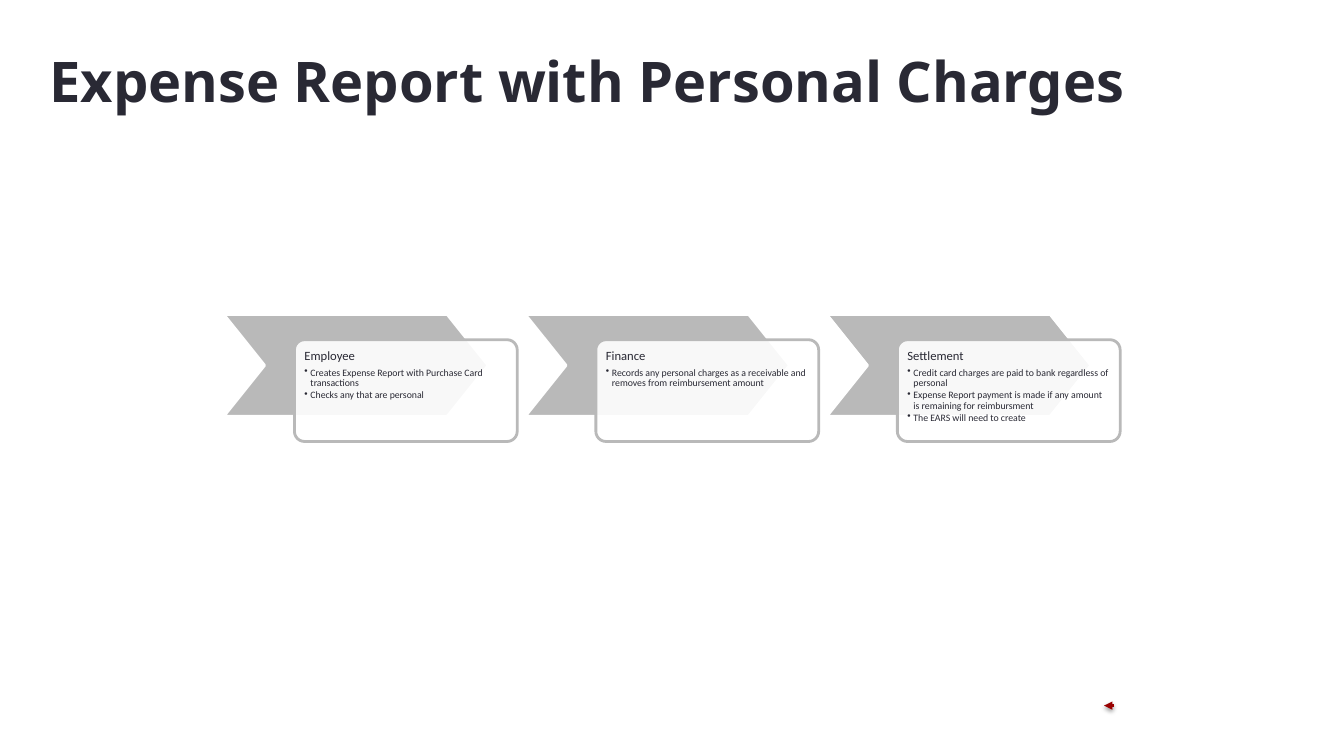
"""Build a slide showing the three steps of an expense report with personal charges."""
import dataclasses

import lxml.etree
import pptx
import pptx.dml.color
import pptx.enum.shapes
import pptx.enum.text
import pptx.oxml.ns
import pptx.util

PX = 9144


@dataclasses.dataclass(frozen=True)
class Theme:
    """Colours, fonts and type sizes of the slide."""
    ink: str = "292934"
    gray: str = "B9B9B9"
    white: str = "FFFFFF"
    red: str = "990000"
    black: str = "000000"
    title_font: str = "Noto Sans"
    body_font: str = "Calibri"
    title_size: int = 40
    heading_size: int = 9
    bullet_size: int = 7
    line_width: int = 2


THEME = Theme()

STEPS = [
    ("Employee", [
        "Creates Expense Report with Purchase Card transactions",
        "Checks any that are personal\u00a0",
    ]),
    ("Finance", [
        "Records any personal charges as a receivable and removes from reimbursement amount",
    ]),
    ("Settlement", [
        "Credit card charges are paid to bank regardless of personal",
        "Expense Report payment is made if any amount is remaining for reimbursment",
        "The EARS will need to create",
    ]),
]


def px(length):
    """Turn px into EMU."""
    return pptx.util.Emu(length * PX)


def rgb(value):
    """Turn a hex string into a colour."""
    return pptx.dml.color.RGBColor.from_string(value)


def add_element(parent, tag, **attributes):
    """Append a DrawingML element to a parent and return it."""
    element = lxml.etree.SubElement(parent, pptx.oxml.ns.qn(tag))
    for name, value in attributes.items():
        element.set(name, str(value))
    return element


def add_text(paragraph, text, font_name, size, bold=False):
    """Add one formatted run to a paragraph."""
    run = paragraph.add_run()
    run.text = text
    run.font.name = font_name
    run.font.size = pptx.util.Pt(size)
    run.font.bold = bold
    run.font.color.rgb = rgb(THEME.ink)
    paragraph.alignment = pptx.enum.text.PP_ALIGN.LEFT
    paragraph.line_spacing = 0.9


def add_title(slide, box, text):
    """Place and fill the title placeholder."""
    title = slide.shapes.title
    title.left, title.top, title.width, title.height = map(px, box)
    frame = title.text_frame
    frame.word_wrap = True
    frame.auto_size = pptx.enum.text.MSO_AUTO_SIZE.NONE
    frame.vertical_anchor = pptx.enum.text.MSO_ANCHOR.MIDDLE
    add_text(frame.paragraphs[0], text, THEME.title_font, THEME.title_size, True)


def add_panel(shapes, kind, box, adjustment, fill, line):
    """Add a filled and outlined preset shape."""
    shape = shapes.add_shape(kind, *map(px, box))
    shape.adjustments[0] = adjustment
    shape.shadow.inherit = False
    shape.fill.solid()
    shape.fill.fore_color.rgb = rgb(fill)
    shape.line.color.rgb = rgb(line)
    shape.line.width = pptx.util.Pt(THEME.line_width)
    return shape


def fill_card(card, heading, bullets):
    """Write a heading and its bullets into a card."""
    frame = card.text_frame
    frame.word_wrap = True
    frame.vertical_anchor = pptx.enum.text.MSO_ANCHOR.TOP
    frame.margin_left = frame.margin_top = px(7)
    frame.margin_right = frame.margin_bottom = px(7)
    first = frame.paragraphs[0]
    add_text(first, heading, THEME.body_font, THEME.heading_size)
    first.space_after = pptx.util.Pt(3)
    for bullet in bullets:
        paragraph = frame.add_paragraph()
        properties = paragraph._p.get_or_add_pPr()
        properties.set("marL", str(px(6)))
        properties.set("indent", str(px(-6)))
        add_element(properties, "a:buChar", char="•")
        paragraph.level = 1
        add_text(paragraph, bullet, THEME.body_font, THEME.bullet_size)
        paragraph.space_after = pptx.util.Pt(1)


def add_step(shapes, box, heading, bullets):
    """Add a chevron with a translucent card over its lower right corner."""
    left, top, width, height = box
    card_left, card_top = 70, 25
    kinds = pptx.enum.shapes.MSO_SHAPE
    add_panel(shapes, kinds.CHEVRON, (left, top, 262, height - card_top),
              0.4, THEME.gray, THEME.white)
    card = add_panel(
        shapes, kinds.ROUNDED_RECTANGLE,
        (left + card_left, top + card_top, width - card_left, height - card_top),
        0.1, THEME.white, THEME.gray)
    color = card._element.spPr.find(".//" + pptx.oxml.ns.qn("a:srgbClr"))
    add_element(color, "a:alpha", val=90000)
    fill_card(card, heading, bullets)


def add_process(slide, box, steps):
    """Lay out the steps as equal columns in one group."""
    left, top, width, height = box
    gap = 8
    step_width = (width - gap * (len(steps) - 1)) // len(steps)
    group = slide.shapes.add_group_shape()
    for index, (heading, bullets) in enumerate(steps):
        step_left = left + index * (step_width + gap)
        add_step(group.shapes, (step_left, top, step_width, height), heading, bullets)


def add_back_arrow(slide, box):
    """Add a short arrow pointing left with a soft shadow."""
    left, top, width, height = box
    arrow = slide.shapes.add_connector(
        pptx.enum.shapes.MSO_CONNECTOR.STRAIGHT,
        px(left + width), px(top), px(left), px(top + height))
    arrow.line.color.rgb = rgb(THEME.red)
    arrow.line.width = pptx.util.Pt(THEME.line_width)
    add_element(arrow.line._get_or_add_ln(), "a:tailEnd", type="triangle")
    effects = add_element(arrow._element.spPr, "a:effectLst")
    shadow = add_element(
        effects, "a:outerShdw", blurRad=pptx.util.Pt(3.1), dist=pptx.util.Pt(1.6),
        dir=5400000, rotWithShape=0)
    color = add_element(shadow, "a:srgbClr", val=THEME.black)
    add_element(color, "a:alpha", val=38000)


def main():
    """Build and save the presentation."""
    presentation = pptx.Presentation()
    presentation.slide_width = px(1333)
    presentation.slide_height = px(750)
    slide = presentation.slides.add_slide(presentation.slide_layouts[5])
    add_title(slide, (39, 42, 1150, 83), "Expense Report with Personal Charges")
    add_back_arrow(slide, (1095, 700, 10, 0))
    add_process(slide, (222, 312, 889, 126), STEPS)
    presentation.save("out.pptx")


if __name__ == "__main__":
    main()
